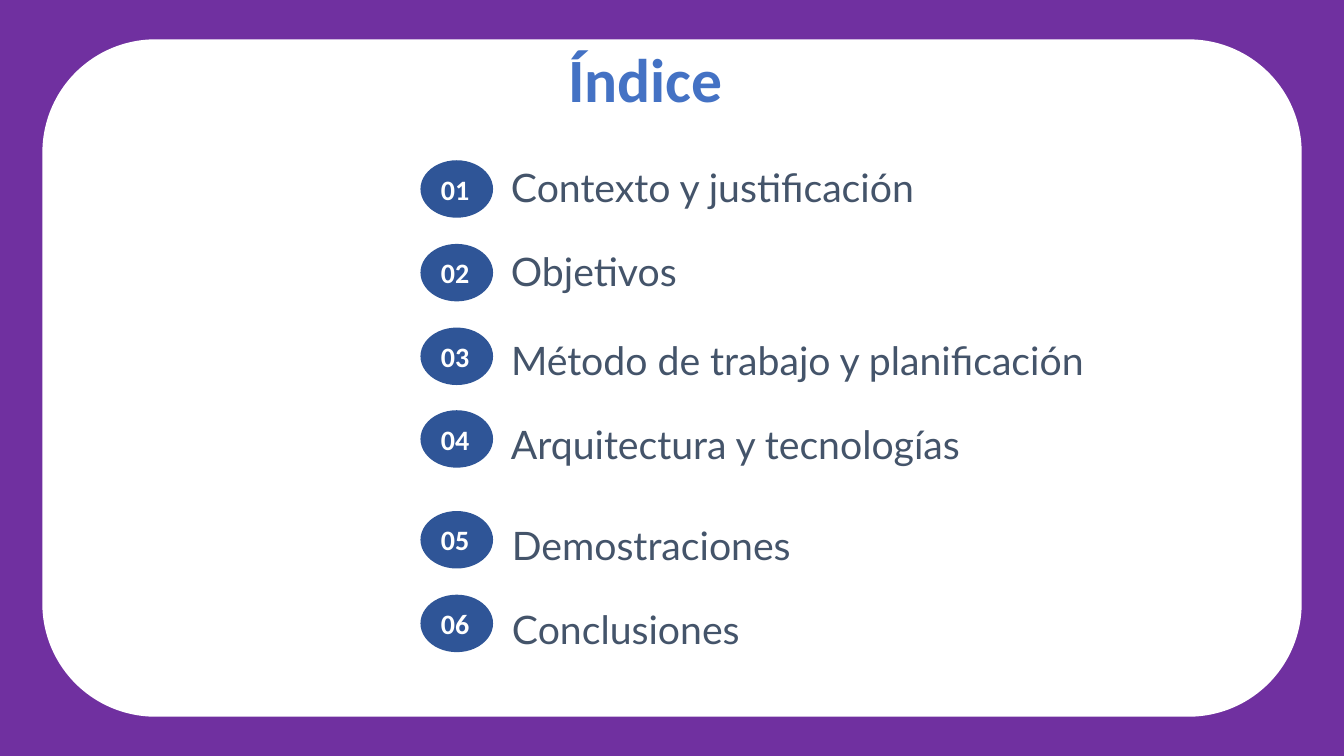
from pptx import Presentation
from pptx.dml.color import RGBColor
from pptx.enum import shapes, text
from pptx.util import Inches, Pt

PURPLE, WHITE = "7030A0", "FFFFFF"
TITLE_BLUE, BADGE_BLUE, SLATE = "4472C4", "2F5597", "44546A"


def paint(fill, color):
    """Make a fill solid in the given hex colour."""
    fill.solid()
    fill.fore_color.rgb = RGBColor.from_string(color)


def write(box, words, font, size, color, bold=False, inset=0.1,
          anchor=text.MSO_ANCHOR.MIDDLE, align=text.PP_ALIGN.LEFT):
    """Set one formatted paragraph in a shape and return it."""
    frame = box.text_frame
    frame.text = words
    frame.word_wrap = True
    frame.vertical_anchor = anchor
    frame.margin_left = frame.margin_right = Inches(inset)
    frame.margin_top = frame.margin_bottom = Inches(inset)
    para = frame.paragraphs[0]
    para.alignment = align
    span = para.runs[0]
    span.font.name = font
    span.font.size = Pt(size)
    span.font.bold = bold
    paint(span.font.fill, color)
    return para


deck = Presentation()
deck.slide_width, deck.slide_height = Inches(13.33), Inches(7.5)
page = deck.slides.add_slide(deck.slide_layouts[6])
paint(page.background.fill, PURPLE)

panel = page.shapes.add_shape(shapes.MSO_SHAPE.ROUNDED_RECTANGLE,
                              Inches(0.42), Inches(0.39), Inches(12.49), Inches(6.72))
panel.adjustments[0] = 0.167
panel.shadow.inherit = False
paint(panel.fill, WHITE)
panel.line.fill.background()

title = page.shapes.add_textbox(Inches(0.52), Inches(0.4), Inches(11.77), Inches(0.84))
para = write(title, "Índice", "Calibri", 44, TITLE_BLUE, bold=True, inset=0.13,
             align=text.PP_ALIGN.CENTER)
para.line_spacing = 0.9

# Entry, top of its badge, left, top and width of its label
entries = [
    ("Contexto y justificación", 1.59, 4.97, 1.52, 5.03),
    ("Objetivos", 2.42, 4.97, 2.35, 5.03),
    ("Método de trabajo y planificación", 3.25, 4.97, 3.24, 6.81),
    ("Arquitectura y tecnologías", 4.07, 4.97, 4.07, 6.14),
    ("Demostraciones", 5.07, 4.98, 5.07, 5.03),
    ("Conclusiones", 5.9, 4.98, 5.9, 5.03),
]
for number, (entry, badge_top, left, top, width) in enumerate(entries, 1):
    badge = page.shapes.add_shape(shapes.MSO_SHAPE.OVAL, Inches(4.17), Inches(badge_top),
                                  Inches(0.72), Inches(0.57))
    badge.shadow.inherit = False
    paint(badge.fill, BADGE_BLUE)
    badge.line.fill.background()
    write(badge, f"{number:02d}", "Calibri", 20, WHITE, bold=True)

    label = page.shapes.add_textbox(Inches(left), Inches(top), Inches(width), Inches(0.71))
    write(label, entry, "Lato", 28, SLATE, anchor=text.MSO_ANCHOR.TOP)

deck.save("out.pptx")
